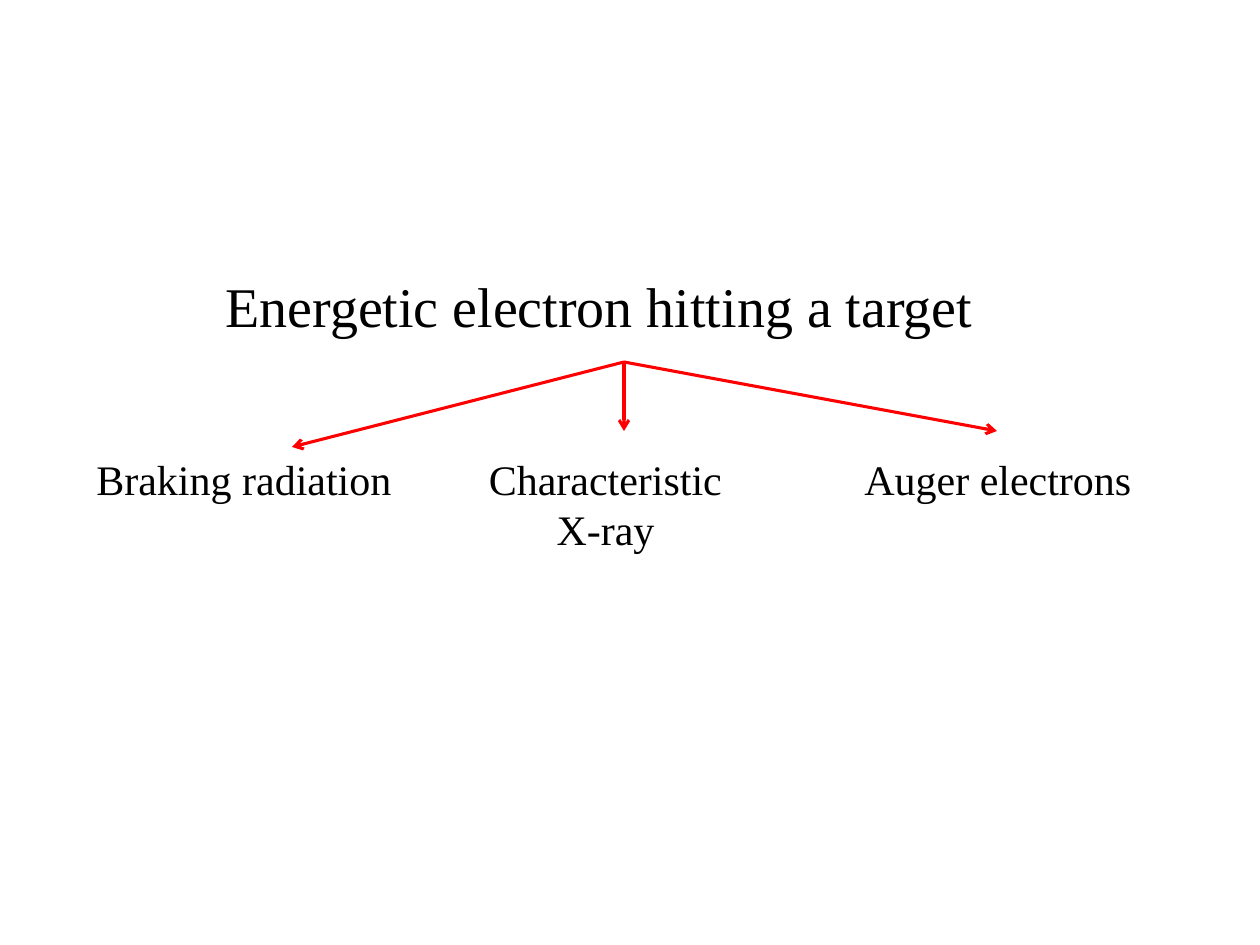
from dataclasses import dataclass

from pptx import Presentation
from pptx.dml.color import RGBColor
from pptx.enum.shapes import MSO_CONNECTOR
from pptx.enum.text import MSO_AUTO_SIZE, PP_ALIGN
from pptx.oxml.ns import qn
from pptx.util import Pt
from lxml.etree import SubElement

PX_PER_INCH = 126


@dataclass(frozen=True)
class Theme:
    font: str = "Times New Roman"
    text: RGBColor = RGBColor(0, 0, 0)
    arrow: RGBColor = RGBColor(255, 0, 0)
    title_size: int = 32
    label_size: int = 24
    arrow_width: float = 1.75


THEME = Theme()


def px(length):
    return round(length * 914400 / PX_PER_INCH)


def add_label(page, text, bounds, size, align=PP_ALIGN.LEFT):
    box = page.shapes.add_textbox(*map(px, bounds))
    frame = box.text_frame
    frame.text = text
    frame.word_wrap = False
    frame.auto_size = MSO_AUTO_SIZE.SHAPE_TO_FIT_TEXT
    for para in frame.paragraphs:
        para.alignment = align
        for span in para.runs:
            span.font.name = THEME.font
            span.font.size = Pt(size)
            span.font.color.rgb = THEME.text


def add_arrow(page, start, end):
    arrow = page.shapes.add_connector(
        MSO_CONNECTOR.STRAIGHT, *map(px, start + end))
    arrow.line.color.rgb = THEME.arrow
    arrow.line.width = Pt(THEME.arrow_width)
    SubElement(arrow.line._get_or_add_ln(), qn("a:tailEnd"), type="arrow")
    SubElement(arrow._element.spPr, qn("a:effectLst"))


def main():
    deck = Presentation()
    deck.slide_width, deck.slide_height = px(1260), px(945)
    page = deck.slides.add_slide(deck.slide_layouts[6])

    # Cause
    add_label(page, "Energetic electron hitting a target",
              (213, 265, 780, 81), THEME.title_size)

    # Outcomes: text, left, width, height, alignment, arrow tip
    origin = (624, 362)
    label_top = 447
    outcomes = [
        ("Braking radiation", 84, 323, 63, PP_ALIGN.LEFT, (292, 447)),
        ("Characteristic\nX-ray", 475, 261, 115, PP_ALIGN.CENTER, (624, 431)),
        ("Auger electrons", 852, 295, 63, PP_ALIGN.LEFT, (997, 431)),
    ]
    for text, left, width, height, align, tip in outcomes:
        add_label(page, text, (left, label_top, width, height),
                  THEME.label_size, align)
        add_arrow(page, origin, tip)

    deck.save("out.pptx")


if __name__ == "__main__":
    main()
